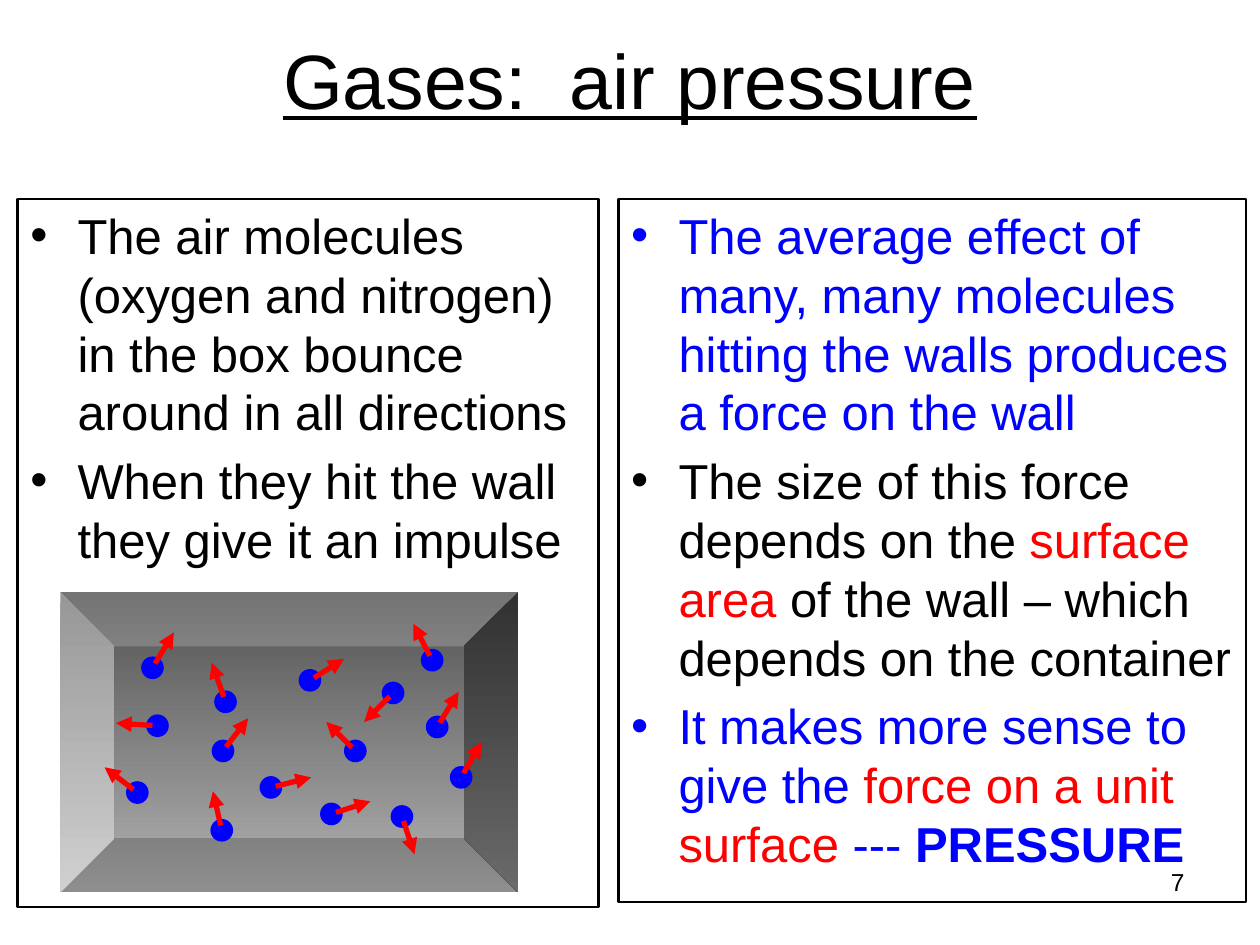
import pptx
import pptx.util
import pptx.dml.color
import pptx.enum.dml
import pptx.enum.shapes
import pptx.enum.text
import pptx.oxml.ns
import lxml.etree

COLS, ROWS = 100, 75
FONT = "Arial"
BLACK, BLUE, RED = "000000", "0000FF", "FF0000"
SHAPE = pptx.enum.shapes.MSO_SHAPE
ALIGN = pptx.enum.text.PP_ALIGN


def color(code):
    return pptx.dml.color.RGBColor.from_string(code)


def write(para, text, size=28, tint=BLACK, bold=False, under=False):
    run = para.add_run()
    run.text = text
    font = run.font
    font.name, font.size = FONT, pptx.util.Pt(size)
    font.bold, font.underline = bold, under
    font.color.rgb = color(tint)


def add_tag(parent, name, **attrs):
    tag = pptx.oxml.ns.qn(name)
    return lxml.etree.SubElement(parent, tag, **attrs)


class Deck:
    """Holds the style and the current slide; lengths are grid columns and rows."""

    def __init__(self):
        self.show = pptx.Presentation()
        self.show.slide_width = pptx.util.Inches(10)
        self.show.slide_height = pptx.util.Inches(7.5)
        self.slide = self.show.slides.add_slide(self.show.slide_layouts[3])
        self.shapes = self.slide.shapes

    def grid(self, *spans):
        """Turn alternating column and row counts into slide lengths."""
        units = (self.show.slide_width / COLS, self.show.slide_height / ROWS)
        return [round(n * units[i % 2]) for i, n in enumerate(spans)]

    def holder(self, index, box):
        shape = self.slide.placeholders[index]
        shape.left, shape.top, shape.width, shape.height = self.grid(*box)
        shape.text_frame.auto_size = pptx.enum.text.MSO_AUTO_SIZE.NONE
        return shape

    def title(self, text, box):
        frame = self.holder(0, box).text_frame
        frame.vertical_anchor = pptx.enum.text.MSO_ANCHOR.MIDDLE
        para = frame.paragraphs[0]
        para.alignment = ALIGN.CENTER
        write(para, text, size=44, under=True)

    def panel(self, index, box, items):
        """Fill a framed bullet list; each item is a list of (text, format)."""
        shape = self.holder(index, box)
        shape.line.color.rgb = color(BLACK)
        shape.line.width = pptx.util.Pt(1.5)
        frame = shape.text_frame
        for i, item in enumerate(items):
            para = frame.add_paragraph() if i else frame.paragraphs[0]
            for text, style in item:
                write(para, text, **style)

    def solid(self, kind, box):
        shape = self.shapes.add_shape(kind, *self.grid(*box))
        shape.shadow.inherit = False
        shape.line.fill.background()
        return shape

    def chamber(self, box, depth, top, base):
        shape = self.solid(SHAPE.BEVEL, box)
        shape.adjustments[0] = depth
        shape.fill.gradient()
        shape.fill.gradient_angle = 270
        for stop, code in zip(shape.fill.gradient_stops, (top, base)):
            stop.color.rgb = color(code)

    def dot(self, x, y, size):
        shape = self.solid(SHAPE.OVAL, (x - size / 2, y - size / 2, size, size))
        shape.fill.solid()
        shape.fill.fore_color.rgb = color(BLUE)

    def arrow(self, *ends):
        kind = pptx.enum.shapes.MSO_CONNECTOR.STRAIGHT
        link = self.shapes.add_connector(kind, *self.grid(*ends))
        link.line.color.rgb = color(RED)
        link.line.width = pptx.util.Pt(3)
        add_tag(link.line._get_or_add_ln(), "a:tailEnd", type="triangle")
        add_tag(link._element.spPr, "a:effectLst")

    def mover(self, x, y, dx, dy):
        """Draw a molecule at x, y whose arrow ends at the offset dx, dy."""
        lead = 0.12
        self.dot(x, y, 1.8)
        self.arrow(x + lead * dx, y + lead * dy, x + dx, y + dy)

    def number(self, text, box):
        frame = self.shapes.add_textbox(*self.grid(*box)).text_frame
        frame.word_wrap = True
        para = frame.paragraphs[0]
        para.alignment = ALIGN.RIGHT
        write(para, text, size=14)


PLAIN, COOL, HOT = {}, {"tint": BLUE}, {"tint": RED}
CAUSE = [
    [("The air molecules (oxygen and nitrogen) in the box bounce around "
      "in all directions", PLAIN)],
    [("When they hit the wall they give it an impulse", PLAIN)],
]
EFFECT = [
    [("The average effect of many, many molecules hitting the walls "
      "produces a force on the wall", COOL)],
    [("The size of this force depends on the ", PLAIN), ("surface area", HOT),
     (" of the wall – which depends on the container", PLAIN)],
    [("It makes more sense to give the ", COOL),
     ("force on a unit surface", HOT), (" --- ", COOL),
     ("PRESSURE", {"tint": BLUE, "bold": True})],
]
# Centre of each molecule, then the reach of its arrow
MOVERS = [
    (12.1, 53, 1.7, -2.8), (10.9, 62.9, -2.6, -2),
    (36.6, 61.7, 1.6, -2.8), (34.7, 57.7, 1.7, -2.8),
    (24.6, 54, 2.7, -1.7), (26.3, 64.6, 3.1, -1),
    (17.7, 59.6, 2, -2.6), (17.9, 55.7, -1.1, -3.1),
    (34.3, 52.4, -1.5, -2.9), (17.6, 65.9, -0.7, -3.1),
    (21.5, 62.5, 3.2, -0.8), (31.2, 55, -2.3, 2.3),
    (28.2, 59.6, -2.3, -2.3), (31.9, 64.8, 1, 3),
    (12.5, 57.6, -3.3, -0.2),
]


def main():
    deck = Deck()
    deck.title("Gases:  air pressure", (0, 0, 100, 12.5))
    deck.panel(1, (1.4, 15.8, 46.1, 56.2), CAUSE)
    deck.panel(2, (49.1, 15.8, 49.8, 55.8), EFFECT)
    deck.chamber((4.8, 47, 36.3, 23.8), 0.18, "525252", "B2B2B2")
    for mover in MOVERS:
        deck.mover(*mover)
    deck.number("7", (71.7, 68.3, 23.3, 5.2))
    deck.show.save("out.pptx")


if __name__ == "__main__":
    main()
